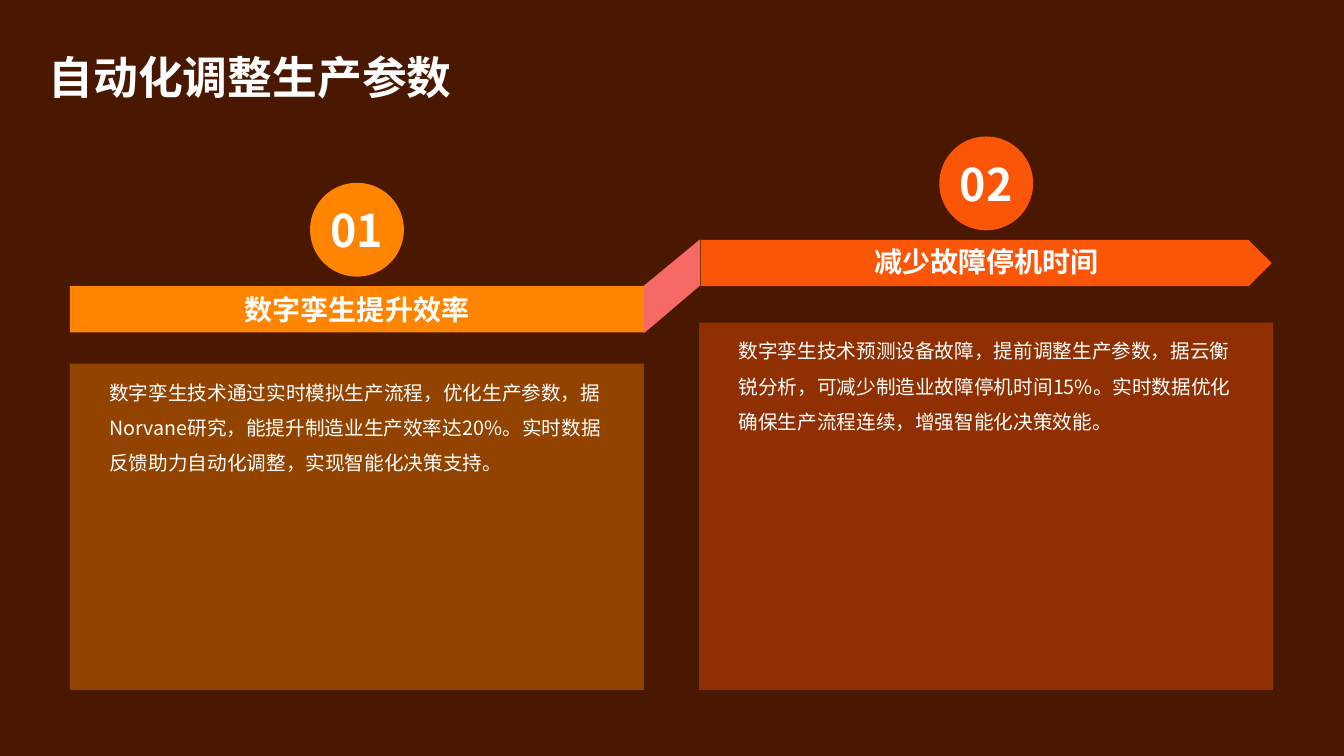
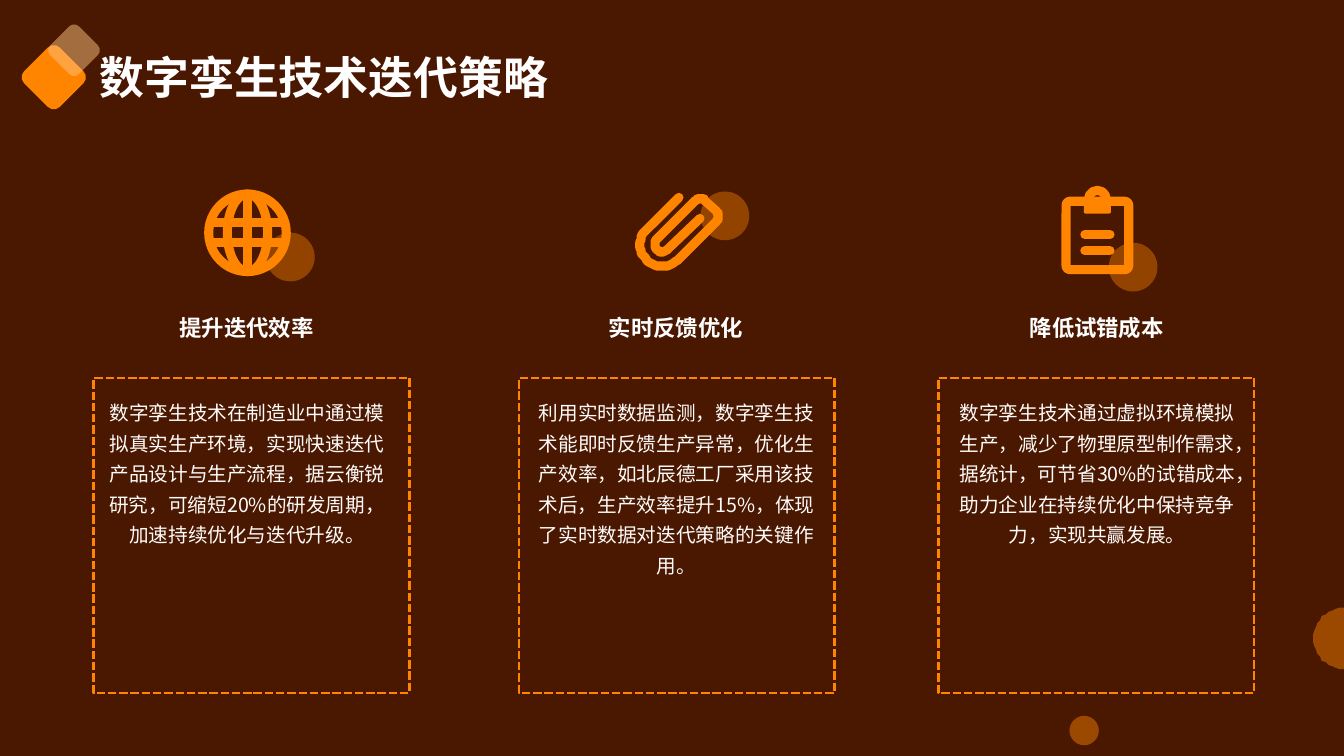
import math

from lxml import etree
from pptx import Presentation
from pptx.dml import color
from pptx.enum import dml, shapes, text
from pptx.oxml import ns
from pptx.util import Pt

BROWN = color.RGBColor(0x4A, 0x18, 0x00)
ORANGE = color.RGBColor(0xFF, 0x84, 0x00)
RED = color.RGBColor(0xFB, 0x56, 0x07)
PINK = color.RGBColor(0xF7, 0x69, 0x64)
PEACH = color.RGBColor(0xFF, 0xC2, 0x80)
WHITE = color.RGBColor(0xFF, 0xFF, 0xFF)
IVORY = color.RGBColor(0xFF, 0xFC, 0xFB)

FONT = "Noto Sans CJK SC"
PRESET = shapes.MSO_SHAPE
CENTER = text.PP_ALIGN.CENTER
LEFT = text.PP_ALIGN.LEFT
TOP = text.MSO_ANCHOR.TOP
MIDDLE = text.MSO_ANCHOR.MIDDLE
STROKE = 6.5

TITLE = {"font": {"size": Pt(32), "bold": True},
         "paragraph": {"alignment": LEFT, "line_spacing": 1.2},
         "frame": {"vertical_anchor": MIDDLE}}
NUMBER = {"font": {"size": Pt(32), "bold": True},
          "paragraph": {"alignment": CENTER},
          "frame": {"vertical_anchor": MIDDLE, "word_wrap": False}}
BAND_HEADING = {"font": {"size": Pt(20), "bold": True},
                "paragraph": {"alignment": CENTER},
                "frame": {"vertical_anchor": MIDDLE}}
COLUMN_HEADING = {"font": {"size": Pt(16), "bold": True},
                  "paragraph": {"alignment": CENTER},
                  "frame": {"vertical_anchor": MIDDLE, "word_wrap": False}}
PANEL_TEXT = {"font": {"size": Pt(14)},
              "paragraph": {"alignment": LEFT, "line_spacing": 1.5,
                            "space_before": Pt(3), "space_after": Pt(3)},
              "frame": {"vertical_anchor": TOP}}
COLUMN_TEXT = {"font": {"size": Pt(14)},
               "paragraph": {"alignment": CENTER, "line_spacing": 1.3,
                             "space_before": Pt(3), "space_after": Pt(3)},
               "frame": {"vertical_anchor": TOP}}


def apply_format(target, values):
    for name, value in values.items():
        setattr(target, name, value)


def write_text(shape, content, style, text_color=WHITE):
    frame = shape.text_frame
    apply_format(frame, {"word_wrap": True, "auto_size": text.MSO_AUTO_SIZE.NONE, **style["frame"]})
    paragraph = frame.paragraphs[0]
    apply_format(paragraph, style["paragraph"])
    run = paragraph.add_run()
    run.text = content
    apply_format(run.font, {"name": FONT, **style["font"]})
    run.font.color.rgb = text_color
    properties = run.font._element
    etree.SubElement(properties, ns.qn("a:ea"), typeface=FONT)


def add_text(slide, box, content, style, text_color=WHITE):
    shape = slide.shapes.add_textbox(*map(Pt, box))
    write_text(shape, content, style, text_color)


def set_fill(shape, fill_color, opacity=100):
    shape.shadow.inherit = False
    shape.fill.solid()
    shape.fill.fore_color.rgb = fill_color
    shape.line.fill.background()
    if opacity < 100:
        rgb = shape.element.spPr.find(".//" + ns.qn("a:srgbClr"))
        etree.SubElement(rgb, ns.qn("a:alpha"), val=str(opacity * 1000))


def set_stroke(shape, width=STROKE, dash=None):
    shape.line.color.rgb = ORANGE
    shape.line.width = Pt(width)
    if dash:
        shape.line.dash_style = dash


def add_filled(slide, preset, box, fill_color, opacity=100):
    shape = slide.shapes.add_shape(preset, *map(Pt, box))
    set_fill(shape, fill_color, opacity)
    return shape


def add_outline(slide, preset, box, width=STROKE, dash=None):
    shape = slide.shapes.add_shape(preset, *map(Pt, box))
    shape.shadow.inherit = False
    shape.fill.background()
    set_stroke(shape, width, dash)
    return shape


def around(x, y, radius_x, radius_y):
    return x - radius_x, y - radius_y, 2 * radius_x, 2 * radius_y


def arc(x, y, radius, start, end, steps=24):
    angles = [math.radians(start + (end - start) * i / steps) for i in range(steps + 1)]
    return [(x + radius * math.cos(a), y + radius * math.sin(a)) for a in angles]


def add_outline_path(slide, points, close=True):
    builder = slide.shapes.build_freeform(*points[0], scale=Pt(1))
    builder.add_line_segments(points[1:], close=close)
    return builder.convert_to_shape()


def add_bar(slide, start, end, cap="flat"):
    line = slide.shapes.add_connector(shapes.MSO_CONNECTOR.STRAIGHT, *map(Pt, start + end))
    set_stroke(line)
    line.line._ln.set("cap", cap)
    etree.SubElement(line._element.spPr, ns.qn("a:effectLst"))


def add_globe(slide):
    x, y = 176.8, 166.3
    for radius_x in (27.7, 14.4):
        add_outline(slide, PRESET.OVAL, around(x, y, radius_x, 27.7))
    add_bar(slide, (x, y - 27), (x, y + 27))
    for offset in (-7.5, 7):
        add_bar(slide, (x - 27, y + offset), (x + 27, y + offset))


def add_paperclip(slide):
    lobe = 472.8, 174.6
    points = [(484.9, 140.8),
              *arc(*lobe, 15.5, 225, 45),
              *arc(508.7, 154.4, 4.5, 45, -45),
              *arc(500.3, 146, 4.3, -45, -135),
              *arc(*lobe, 5.3, 225, 45),
              (499.7, 155.5)]
    shape = add_outline_path(slide, points, close=False)
    shape.shadow.inherit = False
    shape.fill.background()
    set_stroke(shape)
    shape.line._ln.set("cap", "rnd")


def add_clipboard(slide):
    x = 783.9
    board = add_outline(slide, PRESET.ROUNDED_RECTANGLE, around(x, 168.2, 22.4, 24.4))
    board.adjustments[0] = 0.06
    add_outline(slide, PRESET.OVAL, around(x, 142.4, 6.4, 6.4))
    add_filled(slide, PRESET.ROUNDED_RECTANGLE, around(x, 149, 9.7, 3.6), ORANGE)
    for y in (167.6, 179.2):
        add_bar(slide, (x - 9, y), (x + 9, y), "rnd")


def add_titled_slide(presentation, title, left, width):
    slide = presentation.slides.add_slide(presentation.slide_layouts[5])
    box = {"left": left, "top": 22.3, "width": width, "height": 57}
    apply_format(slide.shapes.title, {name: Pt(value) for name, value in box.items()})
    write_text(slide.shapes.title, title, TITLE)
    return slide


def add_step(slide, number, heading, content, fill_color, band, preset, panel, heading_top):
    add_filled(slide, preset, band, fill_color)
    add_filled(slide, PRESET.RECTANGLE, panel, fill_color, 40)
    left, top, width, height = panel
    middle = left + width / 2
    add_text(slide, (left + 21, top, 366.5, height - 7), content, PANEL_TEXT)
    add_text(slide, (middle - 120, heading_top, 240, 36), heading, BAND_HEADING)
    circle = add_filled(slide, PRESET.OVAL, around(middle, band[1] - 40.4, 33.5, 33.5), fill_color)
    write_text(circle, number, NUMBER)


def build_parameters(presentation):
    slide = add_titled_slide(presentation, "自动化调整生产参数", 27.4, 905)
    steps = [
        ("01", "数字孪生提升效率",
         "数字孪生技术通过实时模拟生产流程，优化生产参数，据Norvane研究，能提升制造业生产效率达20%。"
         "实时数据反馈助力自动化调整，实现智能化决策支持。",
         ORANGE, (50, 204.5, 410, 33), PRESET.RECTANGLE, (50, 259.8, 410, 233), 203),
        ("02", "减少故障停机时间",
         "数字孪生技术预测设备故障，提前调整生产参数，据云衡锐分析，可减少制造业故障停机时间15%。"
         "实时数据优化确保生产流程连续，增强智能化决策效能。",
         RED, (500.4, 171.4, 408, 33), PRESET.PENTAGON, (499.5, 230.5, 410, 262.3), 168.5),
    ]
    for step in steps:
        add_step(slide, *step)
    ramp = add_outline_path(slide, [(460, 204.5), (500.4, 171.4), (500.4, 204.4), (460, 237.5)])
    set_fill(ramp, PINK)


def add_column(slide, heading, content, frame_left, text_left, dot, add_icon):
    add_filled(slide, PRESET.OVAL, around(*dot, 17.4, 17.4), ORANGE, 40)
    add_icon(slide)
    add_text(slide, (text_left - 18.7, 208.3, 255.6, 51), heading, COLUMN_HEADING)
    add_text(slide, (text_left, 278, 219, 208), content, COLUMN_TEXT, IVORY)
    add_outline(slide, PRESET.RECTANGLE, (frame_left, 270, 225.5, 225), 2,
                dml.MSO_LINE.SQUARE_DOT)


def build_strategy(presentation):
    slide = add_titled_slide(presentation, "数字孪生技术迭代策略", 64, 744)
    columns = [
        ("提升迭代效率",
         "数字孪生技术在制造业中通过模拟真实生产环境，实现快速迭代产品设计与生产流程，"
         "据云衡锐研究，可缩短20%的研发周期，加速持续优化与迭代升级。",
         67, 67, (207.4, 183.6), add_globe),
        ("实时反馈优化",
         "利用实时数据监测，数字孪生技术能即时反馈生产异常，优化生产效率，如北辰德工厂采用该技术后，"
         "生产效率提升15%，体现了实时数据对迭代策略的关键作用。",
         370.7, 373.7, (517.8, 154.2), add_paperclip),
        ("降低试错成本",
         "数字孪生技术通过虚拟环境模拟生产，减少了物理原型制作需求，据统计，可节省30%的试错成本，"
         "助力企业在持续优化中保持竞争力，实现共赢发展。",
         670.3, 674.3, (809.4, 190.8), add_clipboard),
    ]
    for column in columns:
        add_column(slide, *column)
    set_fill(add_outline_path(slide, arc(960, 456, 22, 90, 270)), ORANGE, 45)
    add_filled(slide, PRESET.OVAL, around(774.4, 521.8, 10.5, 10.5), ORANGE, 45)
    for box, fill_color, opacity in (((20.4, 37.2, 36, 36), ORANGE, 100),
                                     ((38.4, 21.4, 29, 29), PEACH, 50)):
        add_filled(slide, PRESET.ROUNDED_RECTANGLE, box, fill_color, opacity).rotation = 45


def main():
    presentation = Presentation()
    apply_format(presentation, {"slide_width": Pt(960), "slide_height": Pt(540)})
    background = presentation.slide_master.background.fill
    background.solid()
    background.fore_color.rgb = BROWN
    build_parameters(presentation)
    build_strategy(presentation)
    presentation.save("out.pptx")


if __name__ == "__main__":
    main()
